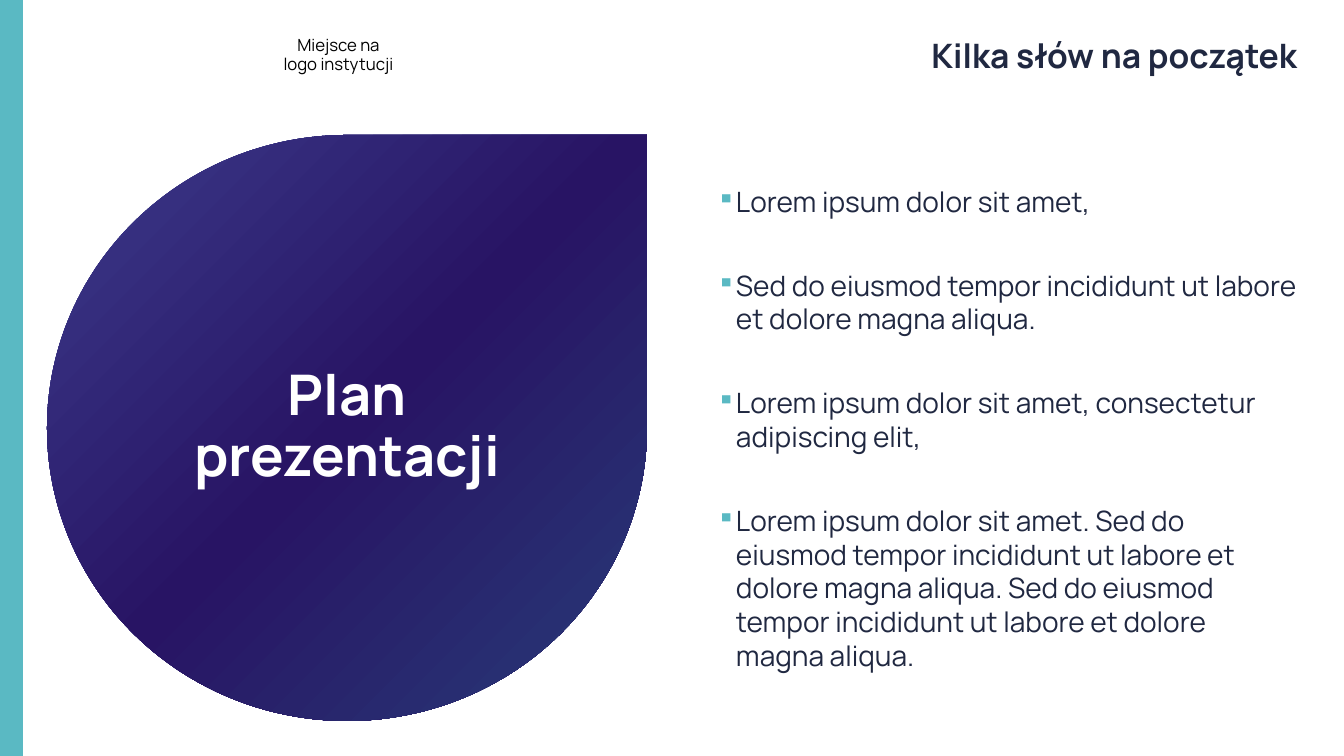
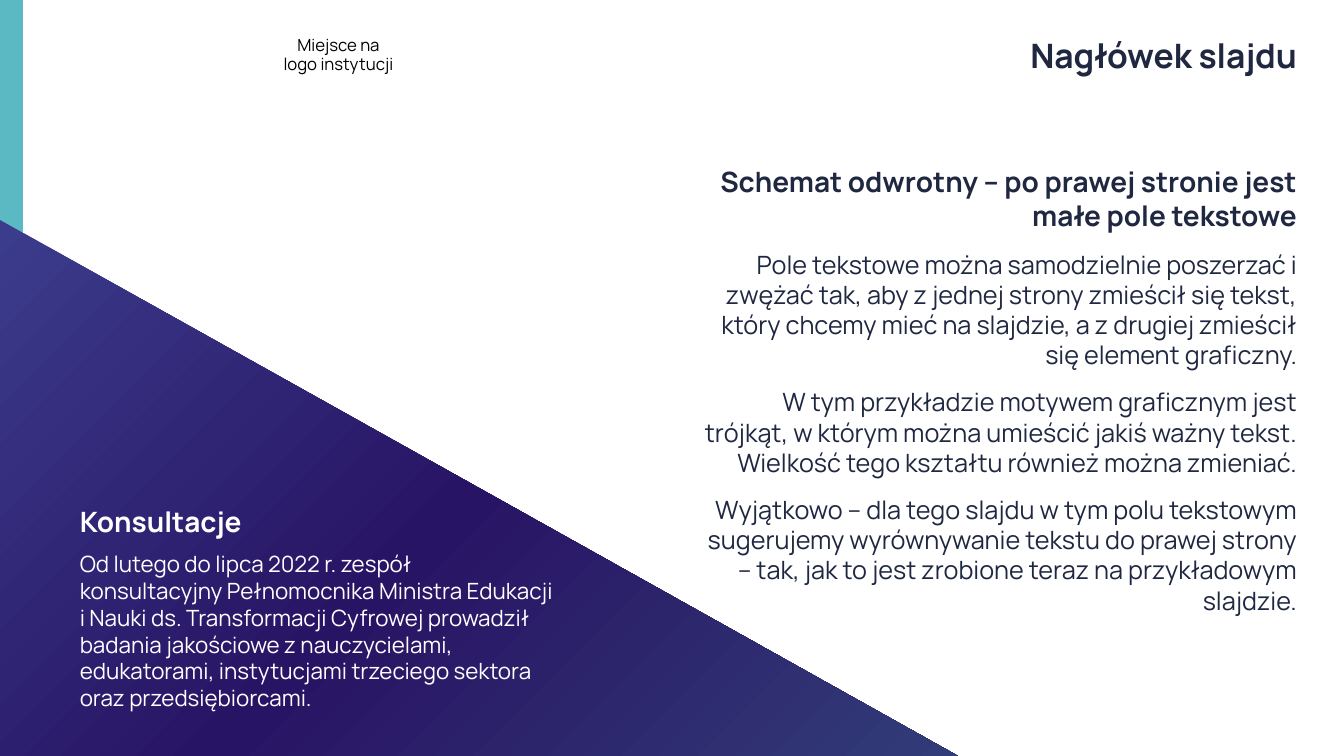
from dataclasses import dataclass

from lxml import etree
from pptx import Presentation
from pptx.dml.color import RGBColor
from pptx.enum import shapes, text
from pptx.oxml import ns
from pptx.util import Emu, Pt

PX = 914400 / 100.8  # EMU in one px
SLIDE_W, SLIDE_H = 1344, 756
TITLE_ONLY = 5
LEFT, CENTER, RIGHT = text.PP_ALIGN.LEFT, text.PP_ALIGN.CENTER, text.PP_ALIGN.RIGHT
MIDDLE, BOTTOM = text.MSO_ANCHOR.MIDDLE, text.MSO_ANCHOR.BOTTOM
Shape = shapes.MSO_SHAPE


# Theme: colours and type sizes
@dataclass(frozen=True)
class Theme:
    font: str = "Manrope"
    ink: str = "202841"
    white: str = "FFFFFF"
    black: str = "000000"
    teal: str = "5AB9C3"
    indigo: str = "3C3C8C"
    violet: str = "281464"
    navy: str = "283C78"
    slate: str = "323C78"
    logo: int = 12
    small: int = 16
    body: int = 18
    lead: int = 20
    title: int = 24
    hero: int = 40


T = Theme()


@dataclass(frozen=True)
class Box:
    x: int
    y: int
    w: int
    h: int

    def emu(self) -> list[Emu]:
        return [Emu(round(v * PX)) for v in (self.x, self.y, self.w, self.h)]


@dataclass(frozen=True)
class Para:
    text: str
    size: int
    color: str = T.ink
    bold: bool = False
    align: text.PP_ALIGN = LEFT
    before: int = 0
    spacing: float = 1.0
    bullet: bool = False


BAND = Box(0, 0, 23, SLIDE_H)
LOGO = Box(267, 24, 143, 63)
TITLE = Box(370, 24, 927, 63)
DROP = Box(47, 135, 600, 586)
PLAN = Box(697, 135, 600, 586)
TRIANGLE = Box(0, 220, 958, 536)
NOTES = Box(697, 135, 600, 510)


# Text
def add_bullet(p) -> None:
    p_pr = p._p.get_or_add_pPr()
    p_pr.set("marL", str(round(39 * PX)))
    p_pr.set("indent", str(round(-19 * PX)))
    color = etree.SubElement(p_pr, ns.qn("a:buClr"))
    etree.SubElement(color, ns.qn("a:srgbClr"), val=T.teal)
    etree.SubElement(p_pr, ns.qn("a:buSzPct"), val="90000")
    etree.SubElement(p_pr, ns.qn("a:buChar"), char="▪")


def write(tf, paras: list[Para], anchor=MIDDLE, inset: bool = False) -> None:
    tf.word_wrap = True
    tf.auto_size = text.MSO_AUTO_SIZE.NONE
    tf.vertical_anchor = anchor
    if not inset:
        tf.margin_left = tf.margin_top = tf.margin_right = tf.margin_bottom = 0
    for i, para in enumerate(paras):
        p = tf.add_paragraph() if i else tf.paragraphs[0]
        if para.bullet:
            add_bullet(p)
        p.alignment = para.align
        p.line_spacing = para.spacing
        p.space_before = Pt(para.before)
        r = p.add_run()
        r.text = para.text
        r.font.name = T.font
        r.font.size = Pt(para.size)
        r.font.bold = para.bold
        r.font.color.rgb = RGBColor.from_string(para.color)


def add_text(s, box: Box, paras: list[Para]) -> None:
    write(s.shapes.add_textbox(*box.emu()).text_frame, paras)


# Shapes
def add_shape(s, kind: Shape, box: Box, fill: str):
    sp = s.shapes.add_shape(kind, *box.emu())
    sp.shadow.inherit = False
    sp.line.fill.background()
    sp.fill.solid()
    sp.fill.fore_color.rgb = RGBColor.from_string(fill)
    return sp


def add_gradient_shape(s, kind: Shape, box: Box, end: str):
    """A shape shaded diagonally from indigo through violet to the end colour."""
    sp = add_shape(s, kind, box, T.violet)
    sp.fill.gradient()
    grad = sp._element.spPr.find(ns.qn("a:gradFill"))
    for child in list(grad):
        grad.remove(child)
    stops = etree.SubElement(grad, ns.qn("a:gsLst"))
    for pos, color in ((0, T.indigo), (50, T.violet), (100, end)):
        stop = etree.SubElement(stops, ns.qn("a:gs"), pos=str(pos * 1000))
        etree.SubElement(stop, ns.qn("a:srgbClr"), val=color)
    etree.SubElement(grad, ns.qn("a:lin"), ang=str(45 * 60000), scaled="0")
    return sp


# Shared frame: band, logo field and title
def add_slide(prs, title: str):
    s = prs.slides.add_slide(prs.slide_layouts[TITLE_ONLY])
    add_shape(s, Shape.RECTANGLE, BAND, T.teal)
    logo = add_shape(s, Shape.ROUNDED_RECTANGLE, LOGO, T.white)
    write(logo.text_frame,
          [Para("Miejsce na logo instytucji", T.logo, T.black, align=CENTER, spacing=0.9)],
          inset=True)
    sp = s.shapes.title
    sp.left, sp.top, sp.width, sp.height = TITLE.emu()
    write(sp.text_frame, [Para(title, T.title, bold=True, align=RIGHT)])
    return s


# Slide 1: plan
def plan_slide(prs) -> None:
    s = add_slide(prs, "Kilka słów na początek")
    drop = add_gradient_shape(s, Shape.TEAR, DROP, T.navy)
    write(drop.text_frame,
          [Para("Plan prezentacji", T.hero, T.white, True, CENTER, spacing=0.9)],
          inset=True)
    points = [
        "Lorem ipsum dolor sit amet,",
        "Sed do eiusmod tempor incididunt ut labore et dolore magna aliqua.",
        "Lorem ipsum dolor sit amet, consectetur adipiscing elit,",
        "Lorem ipsum dolor sit amet. Sed do eiusmod tempor incididunt ut labore "
        "et dolore magna aliqua. Sed do eiusmod tempor incididunt ut labore et "
        "dolore magna aliqua.",
    ]
    add_text(s, PLAN, [Para(point, T.lead, before=36 if i else 0, bullet=True)
                       for i, point in enumerate(points)])


# Slide 2: triangle and right-aligned text
def triangle_slide(prs) -> None:
    s = add_slide(prs, "Nagłówek slajdu")
    triangle = add_gradient_shape(s, Shape.RIGHT_TRIANGLE, TRIANGLE, T.slate)
    write(triangle.text_frame, [
        Para("Konsultacje", T.lead, T.white, True, spacing=0.9),
        Para("Od lutego do lipca 2022 r. zespół konsultacyjny Pełnomocnika Ministra "
             "Edukacji i Nauki ds. Transformacji Cyfrowej prowadził badania "
             "jakościowe z nauczycielami, edukatorami, instytucjami trzeciego "
             "sektora oraz przedsiębiorcami.", T.small, T.white, before=8),
    ], BOTTOM)
    notes = [
        "Pole tekstowe można samodzielnie poszerzać i zwężać tak, aby z jednej "
        "strony zmieścił się tekst, który chcemy mieć na slajdzie, a z drugiej "
        "zmieścił się element graficzny.",
        "W tym przykładzie motywem graficznym jest trójkąt, w którym można "
        "umieścić jakiś ważny tekst. Wielkość tego kształtu również można zmieniać.",
        "Wyjątkowo – dla tego slajdu w tym polu tekstowym sugerujemy wyrównywanie "
        "tekstu do prawej strony – tak, jak to jest zrobione teraz na "
        "przykładowym slajdzie.",
    ]
    heading = Para("Schemat odwrotny – po prawej stronie jest małe pole tekstowe",
                   T.lead, bold=True, align=RIGHT)
    add_text(s, NOTES, [heading] + [Para(note, T.body, align=RIGHT, before=12)
                                    for note in notes])


def main() -> None:
    prs = Presentation()
    prs.slide_width, prs.slide_height = Box(0, 0, SLIDE_W, SLIDE_H).emu()[2:]
    plan_slide(prs)
    triangle_slide(prs)
    prs.save("out.pptx")


if __name__ == "__main__":
    main()
